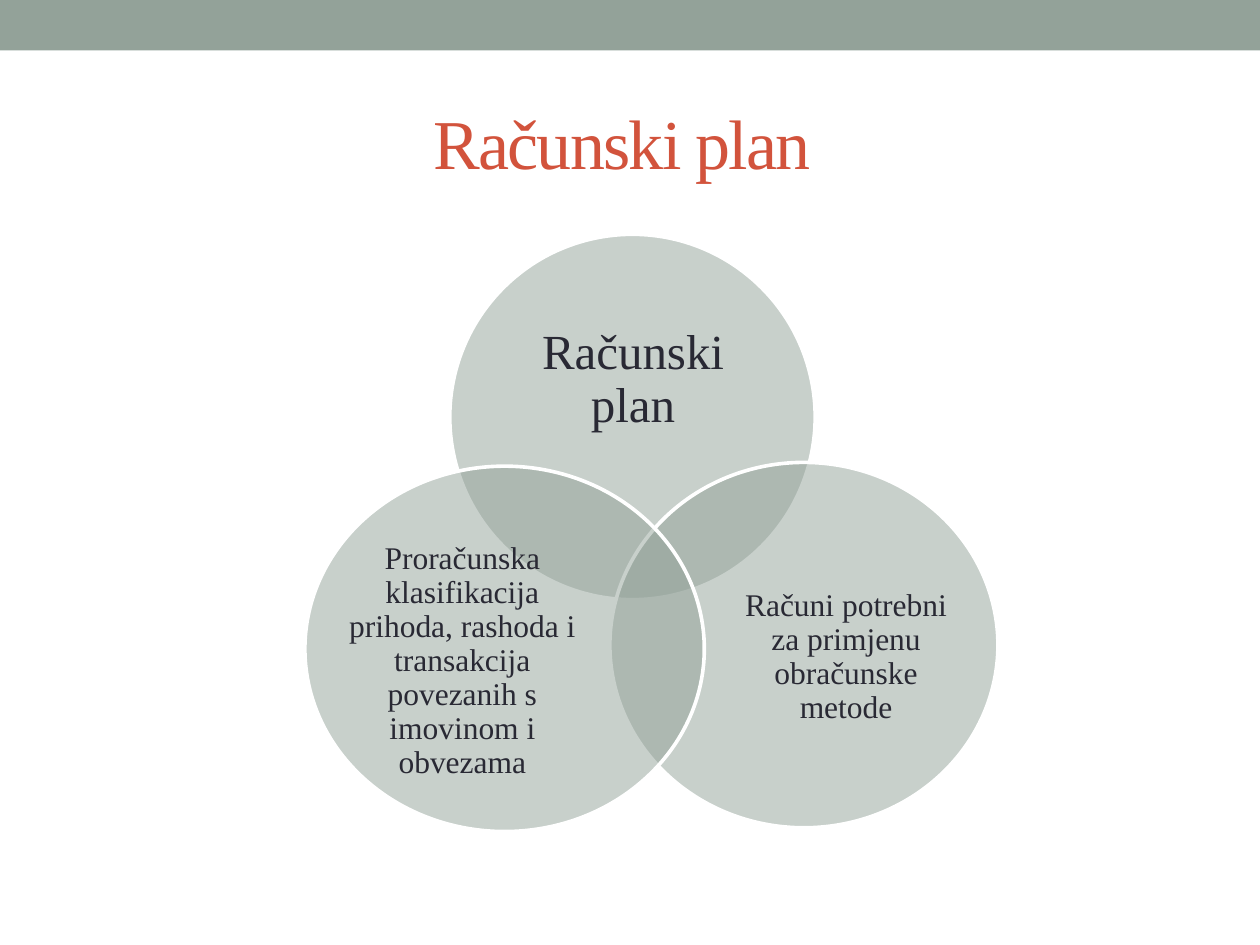
from lxml import etree
from pptx import Presentation
from pptx.dml.color import RGBColor
from pptx.enum.shapes import MSO_SHAPE
from pptx.enum.text import MSO_ANCHOR, PP_ALIGN
from pptx.oxml.ns import qn
from pptx.util import Inches, Pt

COLORS = {"sage": "93A299", "title": "D2533C", "text": "292934", "white": "FFFFFF"}
FONT = "Times New Roman"
VENN_BOX = (2.42, 1.86, 5.5, 4.74)

# Circle and label boxes are left, top, width, height within the diagram
CIRCLES = [
    {"text": "Računski plan", "size": 28,
     "circle": (1.15, 0, 2.9, 2.9), "label": (1.54, 0.51, 2.13, 1.3)},
    {"text": "Računi potrebni za primjenu obračunske metode", "size": 18,
     "circle": (2.42, 1.81, 3.08, 2.9), "label": (3.37, 2.56, 1.85, 1.59)},
    {"text": "Proračunska klasifikacija prihoda, rashoda i transakcija "
             "povezanih s imovinom i obvezama", "size": 18,
     "circle": (0, 1.84, 3.17, 2.9), "label": (0.3, 2.59, 1.9, 1.59)},
]


def rgb(name):
    return RGBColor.from_string(COLORS[name])


def place(box, origin=(0, 0)):
    left, top, width, height = box
    return [Inches(v) for v in (origin[0] + left, origin[1] + top, width, height)]


def write(tf, text, size, color):
    """Fill a text frame with one centred, middle-anchored paragraph."""
    tf.word_wrap = True
    tf.vertical_anchor = MSO_ANCHOR.MIDDLE
    p = tf.paragraphs[0]
    p.alignment = PP_ALIGN.CENTER
    r = p.add_run()
    r.text = text
    for name, value in {"name": FONT, "size": Pt(size)}.items():
        setattr(r.font, name, value)
    r.font.color.rgb = rgb(color)
    return p, r


def add_filled(shapes, kind, box, origin=(0, 0)):
    sp = shapes.add_shape(kind, *place(box, origin))
    sp.shadow.inherit = False
    sp.fill.solid()
    sp.fill.fore_color.rgb = rgb("sage")
    return sp


def add_band(s, box):
    add_filled(s.shapes, MSO_SHAPE.RECTANGLE, box).line.fill.background()


def add_title(s, box):
    title = s.shapes.title
    title.left, title.top, title.width, title.height = place(box)
    _, r = write(title.text_frame, "Računski plan ", 40, "title")
    r.font._element.set("spc", "-100")


def add_circle(shapes, box, origin):
    sp = add_filled(shapes, MSO_SHAPE.OVAL, box, origin)
    color = sp._element.spPr.find(qn("a:solidFill"))[0]
    etree.SubElement(color, qn("a:alpha")).set("val", "50000")
    sp.line.color.rgb = rgb("white")
    sp.line.width = Pt(2.08)


def add_label(shapes, item, origin):
    tf = shapes.add_textbox(*place(item["label"], origin)).text_frame
    for side in ("left", "top", "right", "bottom"):
        setattr(tf, f"margin_{side}", 0)
    p, _ = write(tf, item["text"], item["size"], "text")
    p.line_spacing = 0.9


def add_venn(s, box):
    group = s.shapes.add_group_shape()
    for item in CIRCLES:
        add_circle(group.shapes, item["circle"], box[:2])
        add_label(group.shapes, item, box[:2])


def main():
    prs = Presentation()
    prs.slide_width, prs.slide_height = Inches(10), Inches(7.5)
    s = prs.slides.add_slide(prs.slide_layouts[5])
    add_band(s, (0, 0, 10, 0.4))
    add_title(s, (0.5, 0.58, 9, 1.08))
    add_venn(s, VENN_BOX)
    prs.save("out.pptx")


if __name__ == "__main__":
    main()
